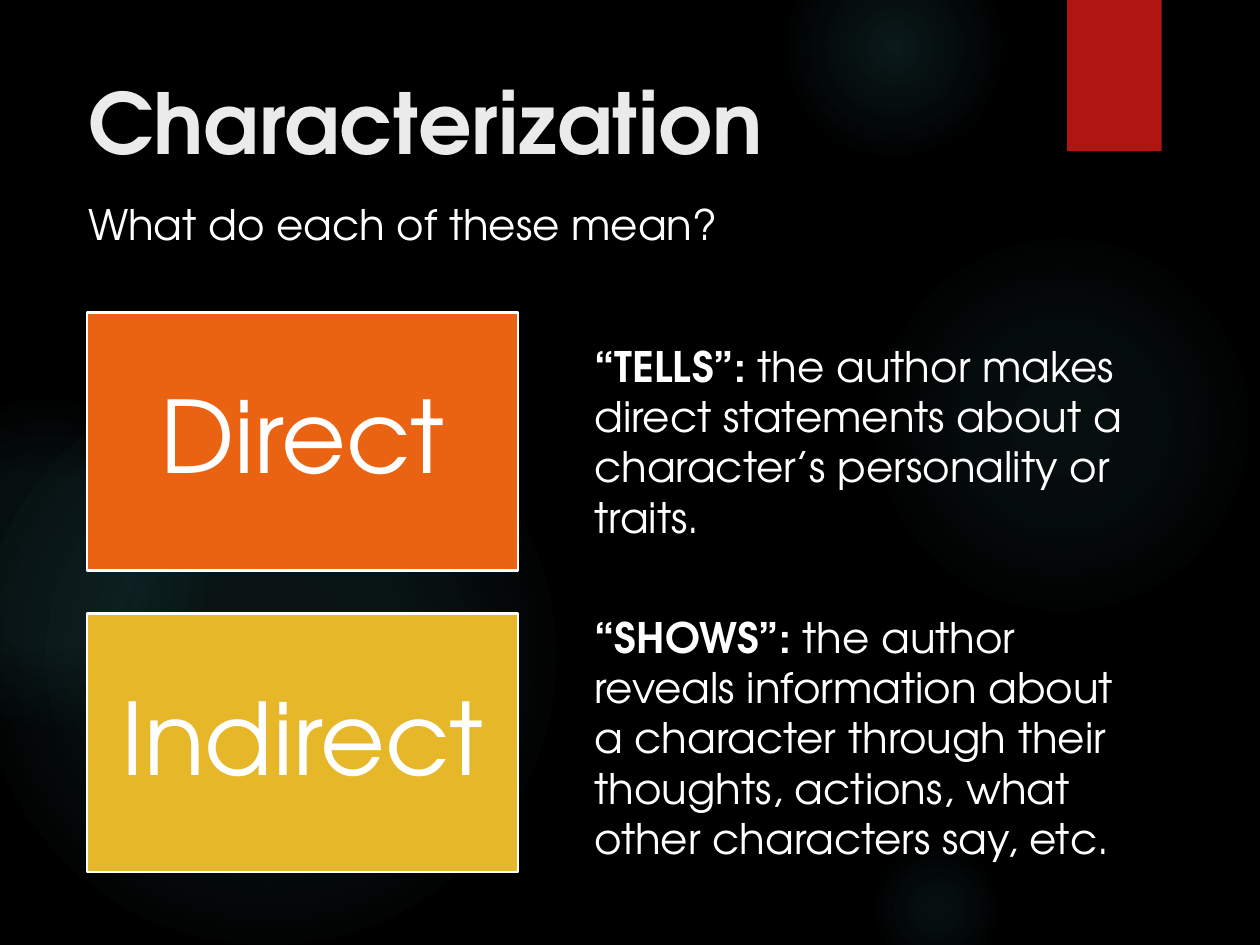
from lxml.etree import SubElement
from pptx import Presentation
from pptx.dml.color import RGBColor
from pptx.enum.shapes import MSO_SHAPE
from pptx.enum.text import MSO_ANCHOR, PP_ALIGN
from pptx.oxml.ns import qn
from pptx.util import Inches, Pt

FONT = "TeX Gyre Adventor"
COLORS = {
    "back": "000000", "glow": "50B9C1", "tab": "B01513", "title": "EBEBEB",
    "text": "FFFFFF", "direct": "EA6312", "indirect": "E6B729",
}

TITLE = "Characterization"
PROMPT = "What do each of these mean?"
# label, colour, card top, key word, meaning, text top, text height
CARDS = [
    ("Direct", "direct", 2.48, "“TELLS”: ",
     "the author makes direct statements about a character’s personality "
     "or traits.", 2.65, 1.72),
    ("Indirect", "indirect", 4.87, "“SHOWS”: ",
     "the author reveals information about a character through their "
     "thoughts, actions, what other characters say, etc.", 4.8, 2.12),
]
# left, top, size, (position %, opacity %) stops
GLOWS = [
    (6.89, 1.83, 3.08, [(0, 7), (36, 6), (69, 0)]),
    (6.22, -0.5, 1.75, [(0, 14), (36, 7), (73, 0)]),
    (6.89, 6.67, 1.08, [(0, 9), (36, 5), (66, 0)]),
    (-0.17, 2.92, 4.58, [(0, 11), (36, 10), (75, 0)]),
    (-0.92, 3.17, 2.58, [(0, 8), (36, 8), (72, 0)]),
]


def rgb(name):
    return RGBColor.from_string(COLORS[name])


def add_box(slide, box, fill=None, line=None, kind=MSO_SHAPE.RECTANGLE):
    shape = slide.shapes.add_shape(kind, *map(Inches, box))
    shape.shadow.inherit = False
    if fill:
        shape.fill.solid()
        shape.fill.fore_color.rgb = rgb(fill)
    if line:
        shape.line.color.rgb = rgb(line)
        shape.line.width = Pt(1.5)
    else:
        shape.line.fill.background()
    return shape


def add_glow(slide, left, top, size, stops):
    """Add a circle whose colour fades out from the centre."""
    shape = add_box(slide, (left, top, size, size), kind=MSO_SHAPE.OVAL)
    shape.fill.gradient()
    grad = shape.fill._xPr.find(qn("a:gradFill"))
    for child in list(grad):
        grad.remove(child)
    group = SubElement(grad, qn("a:gsLst"))
    for place, alpha in stops:
        stop = SubElement(group, qn("a:gs"), pos=str(place * 1000))
        color = SubElement(stop, qn("a:srgbClr"), val=COLORS["glow"])
        SubElement(color, qn("a:alpha"), val=str(alpha * 1000))
    fade = SubElement(grad, qn("a:path"), path="circle")
    SubElement(fade, qn("a:fillToRect"),
               {side: "50000" for side in "ltrb"})


def put_text(shape, *runs, size=24, color="text", align=PP_ALIGN.LEFT,
             anchor=MSO_ANCHOR.TOP, inset=None, spacing=None):
    """Fill a shape with one paragraph of (text, bold) runs."""
    frame = shape.text_frame
    frame.word_wrap = True
    frame.vertical_anchor = anchor
    if inset is not None:
        frame.margin_left = frame.margin_right = Inches(inset)
        frame.margin_top = frame.margin_bottom = Inches(inset)
    para = frame.paragraphs[0]
    para.alignment = align
    if spacing:
        para.line_spacing = spacing
    for text, bold in runs:
        run = para.add_run()
        run.text = text
        font = run.font
        font.name, font.size, font.bold = FONT, Pt(size), bold
        font.color.rgb = rgb(color)


def add_text(slide, box, *runs, **style):
    put_text(slide.shapes.add_textbox(*map(Inches, box)), *runs, **style)


def main():
    deck = Presentation()
    deck.slide_width, deck.slide_height = Inches(10), Inches(7.5)
    slide = deck.slides.add_slide(deck.slide_layouts[6])
    slide.background.fill.solid()
    slide.background.fill.fore_color.rgb = rgb("back")

    for glow in GLOWS:
        add_glow(slide, *glow)
    add_box(slide, (8.47, 0, 0.75, 1.2), "tab")
    add_text(slide, (0.6, 0.51, 7.72, 1.53), (TITLE, True),
             size=48, color="title")
    add_text(slide, (0.6, 1.53, 7.42, 0.5), (PROMPT, False))

    for label, fill, top, key, meaning, text_top, height in CARDS:
        card = add_box(slide, (0.69, top, 3.42, 2.05), fill, "text")
        put_text(card, (label, False), size=57, align=PP_ALIGN.CENTER,
                 anchor=MSO_ANCHOR.MIDDLE, inset=0.24, spacing=0.9)
        add_text(slide, (4.62, text_top, 4.5, height),
                 (key, True), (meaning, False))

    deck.save("out.pptx")


if __name__ == "__main__":
    main()
